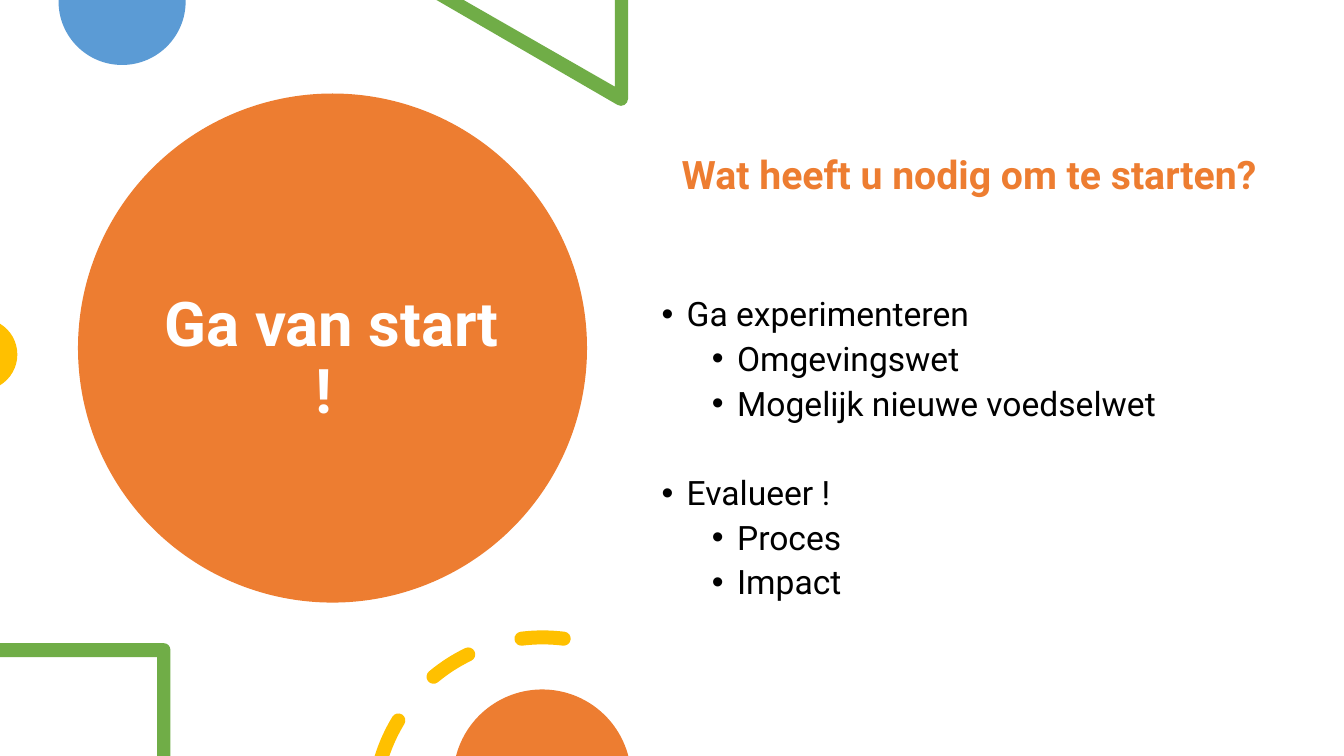
from math import ceil, cos, dist, radians, sin, tan

from lxml.etree import SubElement
from pptx import Presentation
from pptx.dml.color import RGBColor
from pptx.enum.shapes import MSO_SHAPE as Preset
from pptx.enum.text import MSO_ANCHOR as Anchor, MSO_AUTO_SIZE as AutoSize, PP_ALIGN as Align
from pptx.oxml.ns import qn
from pptx.util import Pt

FONT = "Roboto"
ORANGE, BLUE, GREEN, YELLOW = "ED7D31", "5B9BD5", "70AD47", "FFC000"
WHITE, BLACK = "FFFFFF", "000000"


def paint(shape, color):
    shape.shadow.inherit = False
    shape.fill.solid()
    shape.fill.fore_color.rgb = RGBColor.from_string(color)
    shape.line.fill.background()


def place(shape, box):
    shape.left, shape.top, shape.width, shape.height = (Pt(length) for length in box)


def polar(center, radius, angle):
    return center[0] + radius * cos(radians(angle)), center[1] + radius * sin(radians(angle))


def arc(center, radius, start, end):
    """Start point and Bezier triples; degrees run clockwise from the right."""
    pieces = ceil(abs(end - start) / 90)
    step = (end - start) / pieces
    pull = 4 / 3 * tan(radians(step) / 4) * radius
    steps = [polar(center, radius, start)]
    for i in range(pieces):
        a, b = start + i * step, start + (i + 1) * step
        first, last = polar(center, radius, a), polar(center, radius, b)
        steps.append((polar(first, pull, a + 90), polar(last, pull, b - 90), last))
    return steps


def add_outline(slide, origin, contours, color):
    """Fill closed contours of points and Bezier triples, relative to origin."""
    def shift(point):
        return Pt(origin[0] + point[0]), Pt(origin[1] + point[1])

    builder, sizes = None, []
    for start, *steps in contours:
        if builder is None:
            builder = slide.shapes.build_freeform(*shift(start), scale=1.0)
        else:
            builder.move_to(*shift(start))
        points, here = [], start
        for step in steps:
            group = step if len(step) == 3 else (step,)
            if len(group) == 1 and dist(here, step) < 0.3:
                continue
            points += [shift(point) for point in group]
            sizes.append(len(group))
            here = group[-1]
        builder.add_line_segments(points, close=True)
    outline = builder.convert_to_shape()
    segments = iter(list(outline.element.iter(qn("a:lnTo"))))
    for size in sizes:
        segment = next(segments)
        if size == 3:
            segment.tag = qn("a:cubicBezTo")
            for extra in (next(segments), next(segments)):
                segment.append(extra[0])
                extra.getparent().remove(extra)
    paint(outline, color)


def add_run(paragraph, text, size, color, bold=False):
    run = paragraph.add_run()
    run.text = text
    run.font.name = FONT
    run.font.size = Pt(size)
    run.font.bold = bold
    run.font.color.rgb = RGBColor.from_string(color)


def add_backdrop(slide, box):
    backdrop = slide.shapes.add_shape(Preset.RECTANGLE, *(Pt(length) for length in box))
    paint(backdrop, WHITE)
    slide.shapes.title.element.addprevious(backdrop.element)


def add_title_disc(slide, box):
    left, top, diameter = box
    disc = slide.shapes.add_shape(Preset.OVAL, Pt(left), Pt(top), Pt(diameter), Pt(diameter))
    paint(disc, ORANGE)
    title = slide.shapes.title
    title.element.addprevious(disc.element)
    place(title, (left + 54, top + 30.2, 254.9, 320.4))
    frame = title.text_frame
    frame.word_wrap = True
    frame.auto_size = AutoSize.NONE
    frame.vertical_anchor = Anchor.MIDDLE
    heading = frame.paragraphs[0]
    heading.alignment = Align.CENTER
    heading.line_spacing = 0.9
    add_run(heading, "Ga van start ! ", 44, WHITE, bold=True)


def format_paragraph(paragraph, margin, indent, bullet, before):
    properties = paragraph._p.get_or_add_pPr()
    properties.set("marL", str(Pt(margin)))
    properties.set("indent", str(Pt(indent)))
    if bullet:
        SubElement(properties, qn("a:buChar")).set("char", bullet)
    else:
        SubElement(properties, qn("a:buNone"))
    paragraph.line_spacing = 0.9
    paragraph.space_before = Pt(before)
    paragraph.space_after = Pt(6)


def add_checklist(slide, box):
    body = slide.placeholders[1]
    place(body, box)
    frame = body.text_frame
    frame.word_wrap = True
    frame.auto_size = AutoSize.NONE
    frame.vertical_anchor = Anchor.TOP
    question = frame.paragraphs[0]
    format_paragraph(question, 40.5, 0, None, 0)
    question.alignment = Align.CENTER
    add_run(question, "Wat heeft u nodig om te starten? ", 28, ORANGE, bold=True)

    steps = [
        (0, "Ga experimenteren", 65.3),
        (1, "Omgevingswet", 0),
        (1, "Mogelijk nieuwe voedselwet", 0),
        (0, "Evalueer !", 32),
        (1, "Proces", 0),
        (1, "Impact", 0),
    ]
    for level, text, before in steps:
        step = frame.add_paragraph()
        step.level = level
        format_paragraph(step, 58.5 + 36 * level, -18, "•", before)
        step.alignment = Align.LEFT
        add_run(step, text, 24, BLACK)


def add_top_decor(slide, box):
    left, top = box
    add_outline(slide, (left + 41.8, top), [arc((45.4, 1), 45.4, 0, 180) + [(0, 0), (90.8, 0)]], BLUE)
    triangle = [(136.8, 0), (127.4, 0), (127.4, 61.9), (19.4, 0), (0, 0)]
    add_outline(slide, (left + 311.8, top), [triangle + arc((131.8, 70.6), 5, 120, 0)], GREEN)


def add_left_decor(slide, box):
    left, top = box
    add_outline(slide, (left, top + 231.2), [arc((-13.3, 22), 25.7, -58.8, 58.8)], YELLOW)
    inner_edge = [(112.3, 80.6), (112.3, 10), (0, 10), (0, 0)]
    corner = arc((117, 4.7), 4.7, 270, 360)
    add_outline(slide, (left, top + 459.4), [corner + [(121.7, 80.6)] + inner_edge], GREEN)


def ring_dash(center, radius, half_width, start, end):
    """A band along a ring with rounded ends."""
    def cap(angle, turn):
        return arc(polar(center, radius, angle), half_width, turn, turn + 180)

    outer = arc(center, radius + half_width, start, end)
    inner = arc(center, radius - half_width, end, start)
    return outer + cap(end, end) + inner + cap(start, start + 180)


def add_bottom_decor(slide, box):
    left, top = box
    radius, half_width = 122, 5
    cut_center, center = (121, 128), (119.8, 127.3)
    cut_dash = (arc(cut_center, radius + half_width, 197.4, 211.3)
                + arc(polar(cut_center, radius, 211.3), half_width, 211.3, 391.3)
                + arc(cut_center, radius - half_width, 211.3, 198.9))
    whole_dashes = [ring_dash(center, radius, half_width, start, end)
                    for start, end in [(230.3, 244.2), (262.9, 277.1)]]
    add_outline(slide, (left, top), [cut_dash] + whole_dashes, YELLOW)
    add_outline(slide, (left, top), [arc((119.5, 106.1), 63.6, 194.7, 345.3)], ORANGE)


def main():
    deck = Presentation()
    deck.slide_width, deck.slide_height = Pt(960), Pt(540)
    slide = deck.slides.add_slide(deck.slide_layouts[1])
    add_backdrop(slide, (0, 0, 960, 540))
    add_title_disc(slide, (55.7, 66.8, 363.6))
    add_top_decor(slide, (0, 0))
    add_left_decor(slide, (0, 0))
    add_checklist(slide, (424.8, 107.4, 501.1, 363.6))
    add_bottom_decor(slide, (267.8, 450))
    deck.save("out.pptx")


if __name__ == "__main__":
    main()
